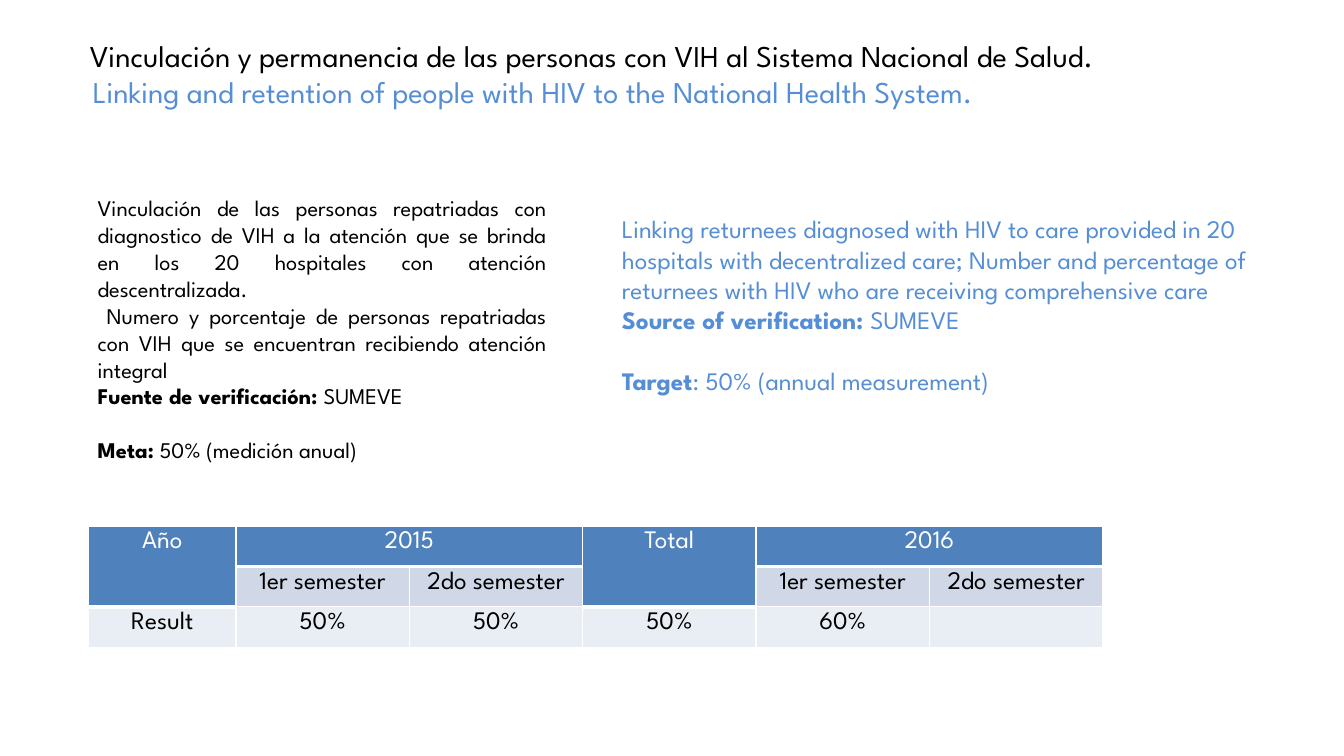
"""Build the slide on linking people with HIV to the health system."""
from lxml import etree
from pptx import Presentation, util as u
from pptx.dml.color import RGBColor
from pptx.enum import text as t
from pptx.oxml import ns

INK = {"black": "000000", "white": "FFFFFF", "sky": "558ED5",
       "head": "4F81BD", "sub": "D0D8E8", "row": "E9EDF4"}
FONT = "League Spartan"


def add_run(para, words, size, ink, bold=False):
    run = para.add_run()
    run.text = words
    run.font.name = FONT
    run.font.size = u.Pt(size)
    run.font.bold = bold
    run.font.color.rgb = RGBColor.from_string(INK[ink])


def add_edge(cell, side, width):
    line = etree.SubElement(cell._tc.get_or_add_tcPr(), ns.qn("a:" + side),
                            w=str(u.Pt(width)))
    fill = etree.SubElement(line, ns.qn("a:solidFill"))
    etree.SubElement(fill, ns.qn("a:srgbClr"), val=INK["white"])


deck = Presentation()
deck.slide_width, deck.slide_height = u.Inches(13.33), u.Inches(7.5)
slide = deck.slides.add_slide(deck.slide_layouts[5])

title = slide.shapes.title
title.left, title.top = u.Inches(0.57), u.Inches(0.33)
title.width, title.height = u.Inches(11.75), u.Inches(0.8)
frame = title.text_frame
frame.word_wrap = True
frame.auto_size = t.MSO_AUTO_SIZE.NONE
frame.vertical_anchor = t.MSO_ANCHOR.MIDDLE
para = frame.paragraphs[0]
para.alignment = t.PP_ALIGN.LEFT
props = para._p.get_or_add_pPr()
props.set("marL", str(u.Inches(0.25)))
props.set("indent", str(u.Inches(-0.03)))
add_run(para, "Vinculación y permanencia de las personas con VIH al Sistema Nacional de Salud.", 21.6, "black")
para.add_line_break()
add_run(para, "Linking and retention of people with HIV to the National Health System.", 21.6, "sky")

spanish = [
    (0, 0, [("Vinculación de las personas repatriadas con diagnostico de VIH a la atención que se "
             "brinda en los 20 hospitales con atención descentralizada.", False)]),
    (0, 0.09, [("Numero y porcentaje de personas repatriadas con VIH que se encuentran "
                "recibiendo atención integral", False)]),
    (0, 0, [("Fuente de verificación: ", True), ("SUMEVE", False)]),
    (19.2, 0, [("Meta:", True), (" 50% (medición anual)", False)]),
]
english = [
    (0, 0, [("Linking returnees diagnosed with HIV to care provided in 20 hospitals with "
             "decentralized care; Number and percentage of returnees with HIV who are "
             "receiving comprehensive care", False)]),
    (0, 0, [("Source of verification: ", True), ("SUMEVE", False)]),
    (21.6, 0, [("Target", True), (": 50% (annual measurement)", False)]),
]
blocks = [
    ((0.87, 1.88, 4.65, 2.9), spanish, 16, "black", t.PP_ALIGN.JUSTIFY),
    ((6.07, 2.07, 6.67, 2.22), english, 18, "sky", t.PP_ALIGN.LEFT),
]
for place, paras, size, ink, align in blocks:
    frame = slide.shapes.add_textbox(*map(u.Inches, place)).text_frame
    frame.word_wrap = True
    for i, (gap, indent, runs) in enumerate(paras):
        para = frame.add_paragraph() if i else frame.paragraphs[0]
        para.alignment = align
        para.space_before = u.Pt(gap)
        para._p.get_or_add_pPr().set("indent", str(u.Inches(indent)))
        for words, bold in runs:
            add_run(para, words, size, ink, bold)

data = [
    ["Año", "2015", "", "Total", "2016", ""],
    ["", "1er semester", "2do semester", "", "1er semester", "2do semester"],
    ["Result", "50%", "50%", "50%", "60%", ""],
]
widths = [1.46] + [1.72] * 5
high = 0.4
table = slide.shapes.add_table(3, 6, u.Inches(0.88), u.Inches(5.22),
                               u.Inches(sum(widths)), u.Inches(3 * high)).table
for col, width in zip(table.columns, widths):
    col.width = u.Inches(width)
for r, line in enumerate(data):
    table.rows[r].height = u.Inches(high)
    for c, words in enumerate(line):
        cell = table.cell(r, c)
        head = r == 0 or (r == 1 and c in (0, 3))
        cell.margin_top = cell.margin_bottom = u.Inches(0.05)
        for side in ("lnL", "lnR", "lnT", "lnB"):
            add_edge(cell, side, 3 if head and side == "lnB" else 1)
        cell.fill.solid()
        shade = "head" if head else ("sub" if r == 1 else "row")
        cell.fill.fore_color.rgb = RGBColor.from_string(INK[shade])
        para = cell.text_frame.paragraphs[0]
        para.alignment = t.PP_ALIGN.CENTER
        if words:
            add_run(para, words, 18, "white" if head else "black")
for c in (0, 3):
    table.cell(0, c).merge(table.cell(1, c))
for c in (1, 4):
    table.cell(0, c).merge(table.cell(0, c + 1))

deck.save("out.pptx")
